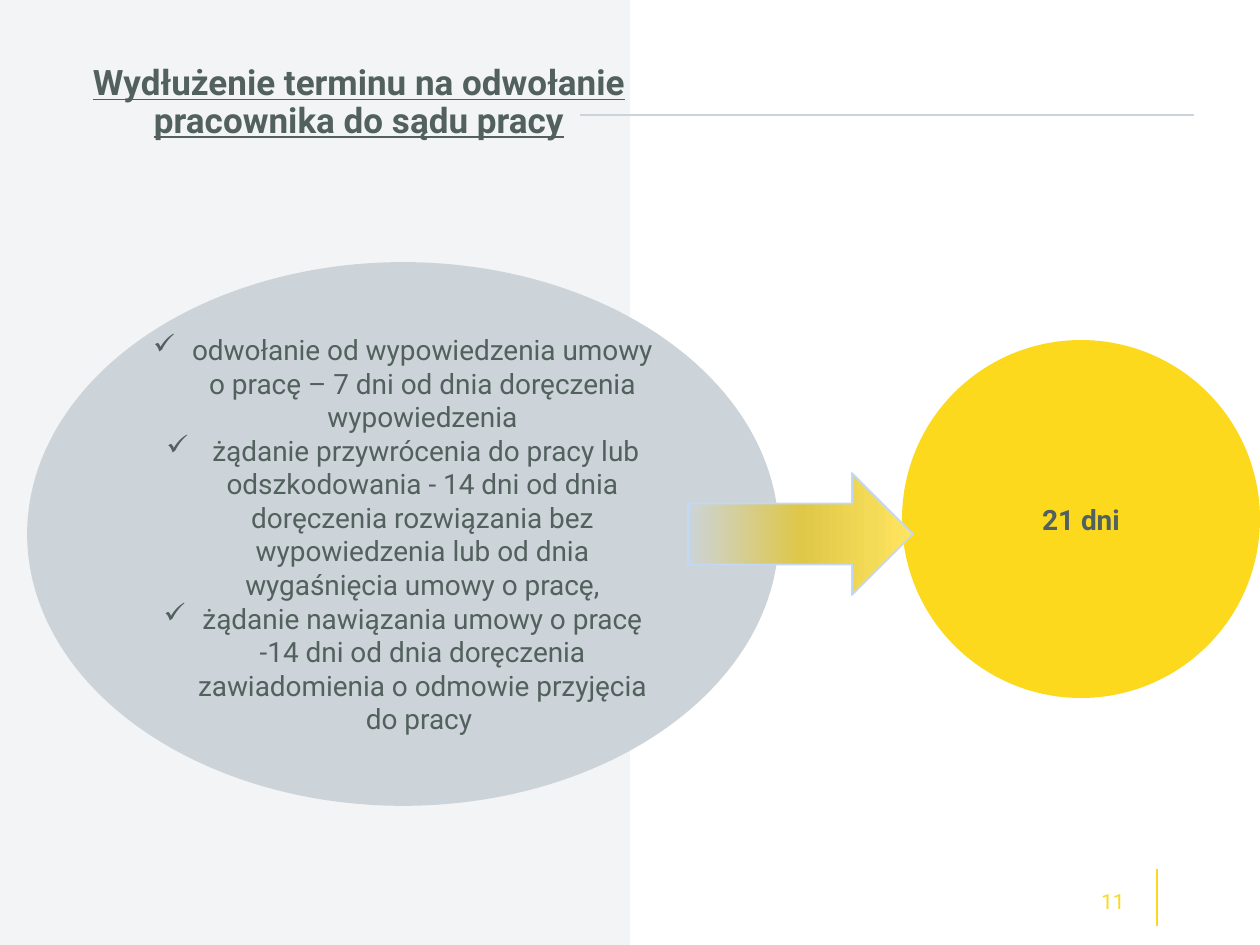
from copy import deepcopy
from dataclasses import dataclass

from lxml.etree import SubElement
from pptx import Presentation
from pptx.dml.color import RGBColor
from pptx.enum.shapes import MSO_CONNECTOR, MSO_SHAPE
from pptx.enum.text import MSO_ANCHOR, PP_ALIGN
from pptx.oxml.ns import qn
from pptx.util import Emu, Pt


@dataclass(frozen=True)
class Theme:
    font: str = "Roboto"
    ink: str = "52615D"
    yellow: str = "FCD91D"
    panel: str = "F2F4F6"
    gray: str = "CCD4D9"
    arrow_edge: str = "C2D8F8"
    arrow_stops: tuple = ((0, "CCD4D9"), (0.5, "DFC748"), (1, "FFE55F"))
    title_size: int = 20
    body_size: int = 16
    number_size: int = 12


THEME = Theme()
WIDTH, HEIGHT = 1260, 945
TITLE = "Wydłużenie terminu na odwołanie pracownika do sądu pracy"
CLAIMS = [
    "odwołanie od wypowiedzenia umowy o pracę – 7 dni od dnia doręczenia wypowiedzenia",
    " żądanie przywrócenia do pracy lub odszkodowania - 14 dni od dnia doręczenia "
    "rozwiązania bez wypowiedzenia lub od dnia wygaśnięcia umowy o pracę,",
    "żądanie nawiązania umowy o pracę -14 dni od dnia doręczenia zawiadomienia "
    "o odmowie przyjęcia do pracy ",
]


def px(n):
    return Emu(round(n * 914400 / 126))


def rgb(color):
    return RGBColor.from_string(color)


def add_line(s, x1, y1, x2, y2, color, width):
    line = s.shapes.add_connector(MSO_CONNECTOR.STRAIGHT, px(x1), px(y1), px(x2), px(y2))
    line.line.color.rgb = rgb(color)
    line.line.width = Pt(width)
    SubElement(line._element.spPr, qn("a:effectLst"))


def add_box(s, kind, box, fill=None, edge=None):
    sp = s.shapes.add_shape(kind, *map(px, box))
    sp.shadow.inherit = False
    if fill:
        sp.fill.solid()
        sp.fill.fore_color.rgb = rgb(fill)
    if edge:
        sp.line.color.rgb = rgb(edge)
        sp.line.width = Pt(1)
    else:
        sp.line.fill.background()
    return sp


def add_check(p, indent):
    pPr = p._p.get_or_add_pPr()
    pPr.set("marL", str(px(indent)))
    pPr.set("indent", str(-px(indent)))
    SubElement(pPr, qn("a:buChar")).set("char", "✓")


def write(sp, lines, size, color=THEME.ink, align=PP_ALIGN.CENTER, bold=False, check=0):
    tf = sp.text_frame
    tf.word_wrap = True
    tf.vertical_anchor = MSO_ANCHOR.MIDDLE
    tf.text = "\n".join(lines)
    for p in tf.paragraphs:
        p.alignment = align
        if check:
            add_check(p, check)
        for r in p.runs:
            r.font.name = THEME.font
            r.font.size = Pt(size)
            r.font.bold = bold
            r.font.color.rgb = rgb(color)
    return tf


def add_backdrop(s, box):
    x, y, w, h = box
    add_box(s, MSO_SHAPE.RECTANGLE, (x, y, w // 2, h), THEME.panel)
    add_line(s, x + 580, y + 115, x + 1194, y + 115, THEME.gray, 0.75)


def add_title(s, box):
    sp = s.shapes.title
    sp.left, sp.top, sp.width, sp.height = map(px, box)
    p = write(sp, [TITLE], THEME.title_size, bold=True).paragraphs[0]
    p.line_spacing = 0.9
    p.runs[0].font.underline = True
    s.shapes._spTree.append(sp._element)


def add_claims(s, box):
    sp = add_box(s, MSO_SHAPE.OVAL, box, THEME.gray, THEME.gray)
    write(sp, CLAIMS, THEME.body_size, check=39)


def add_deadline(s, box):
    sp = add_box(s, MSO_SHAPE.OVAL, box, THEME.yellow)
    write(sp, ["21 dni"], THEME.body_size, bold=True)


def add_arrow(s, box):
    sp = add_box(s, MSO_SHAPE.RIGHT_ARROW, box, edge=THEME.arrow_edge)
    sp.fill.gradient()
    sp.fill.gradient_angle = 0
    stops = sp._element.spPr.find(".//" + qn("a:gsLst"))
    stops.append(deepcopy(stops[0]))
    for stop, (position, color) in zip(sp.fill.gradient_stops, THEME.arrow_stops):
        stop.position = position
        stop.color.rgb = rgb(color)


def add_number(s, box):
    x, y, w, h = box
    sp = s.shapes.add_textbox(*map(px, box))
    write(sp, ["11"], THEME.number_size, THEME.yellow, PP_ALIGN.RIGHT)
    add_line(s, x + w + 20, y - 7, x + w + 20, y + h, THEME.yellow, 1.5)


def main():
    prs = Presentation()
    prs.slide_width, prs.slide_height = px(WIDTH), px(HEIGHT)
    s = prs.slides.add_slide(prs.slide_layouts[5])
    add_backdrop(s, (0, 0, WIDTH, HEIGHT))
    add_number(s, (890, 876, 247, 50))
    add_title(s, (29, 37, 660, 133))
    add_deadline(s, (902, 340, 358, 358))
    add_claims(s, (28, 263, 750, 542))
    add_arrow(s, (688, 473, 225, 122))
    prs.save("out.pptx")


if __name__ == "__main__":
    main()
